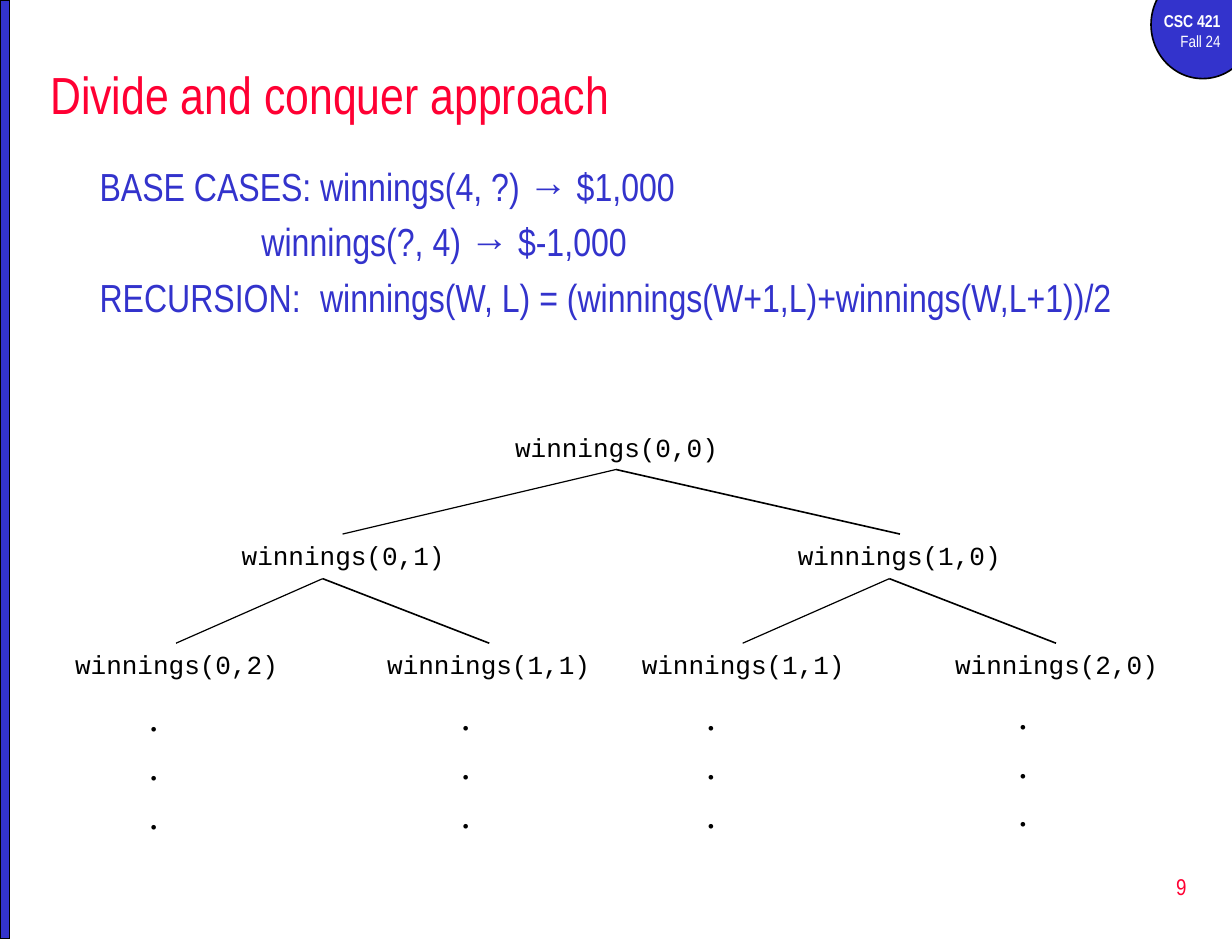
from pptx import Presentation
from pptx.dml.color import RGBColor
from pptx.enum.shapes import MSO_CONNECTOR, MSO_SHAPE
from pptx.enum.text import MSO_ANCHOR, PP_ALIGN
from pptx.oxml.ns import qn
from pptx.util import Inches, Pt
from lxml import etree

LEFT, CENTER, RIGHT = PP_ALIGN.LEFT, PP_ALIGN.CENTER, PP_ALIGN.RIGHT
TOP, MIDDLE = MSO_ANCHOR.TOP, MSO_ANCHOR.MIDDLE
OVAL, RECT = MSO_SHAPE.OVAL, MSO_SHAPE.RECTANGLE
STRAIGHT = MSO_CONNECTOR.STRAIGHT

COLORS = {k: RGBColor.from_string(v) for k, v in {
    "blue": "3333CC", "red": "FF0033", "black": "000000", "white": "FFFFFF",
}.items()}
NARROW, MONO, SERIF = "Arial Narrow", "Courier New", "Times New Roman"

prs = Presentation()
prs.slide_width, prs.slide_height = Inches(10.5), Inches(8)
s = prs.slides.add_slide(prs.slide_layouts[6])


def add_text(x, y, w, h, lines, size, font, color, align=LEFT, anchor=TOP, before=0):
    tb = s.shapes.add_textbox(Inches(x), Inches(y), Inches(w), Inches(h))
    tf = tb.text_frame
    tf.word_wrap = True
    tf.vertical_anchor = anchor
    for i, line in enumerate(lines):
        p = tf.paragraphs[0] if i == 0 else tf.add_paragraph()
        p.alignment = align
        p.space_before = Pt(before)
        r = p.add_run()
        r.text = line
        r.font.size, r.font.name = Pt(size), font
        r.font.color.rgb = COLORS[color]
    return tf


def add_line(x1, y1, x2, y2, width):
    ln = s.shapes.add_connector(STRAIGHT, Inches(x1), Inches(y1), Inches(x2), Inches(y2))
    ln.line.color.rgb = COLORS["black"]
    ln.line.width = Pt(width)
    etree.SubElement(ln._element.spPr, qn("a:effectLst"))


# Corner badge and left bar
for kind, x, y, w, h in [(OVAL, 9.81, -0.25, 0.88, 0.92), (RECT, 0, 0, 0.08, 8)]:
    sp = s.shapes.add_shape(kind, Inches(x), Inches(y), Inches(w), Inches(h))
    sp.shadow.inherit = False
    sp.fill.solid()
    sp.fill.fore_color.rgb = COLORS["blue"]
    sp.line.color.rgb = COLORS["black"]
    sp.line.width = Pt(1)

tf = add_text(9.67, 0.04, 0.83, 0.46, ["CSC 421", "Fall 24"], 10, NARROW, "white", RIGHT)
r = tf.paragraphs[0].runs[0]
r.font.bold, r.font.size = True, Pt(10.5)

# Title
add_text(0.33, 0.42, 9.92, 0.75, ["Divide and conquer approach"], 32, NARROW, "red",
         anchor=MIDDLE)

# Base cases and recursion, hanging indent with default tab stops
rules = ["BASE CASES:\twinnings(4, ?) → $1,000",
         "\t\t\twinnings(?, 4) → $-1,000",
         "RECURSION:\twinnings(W, L) = (winnings(W+1,L)+winnings(W,L+1))/2"]
tf = add_text(0.75, 1.33, 9.52, 1.75, rules, 24, NARROW, "blue", before=5.5)
for p in tf.paragraphs:
    pPr = p._p.get_or_add_pPr()
    pPr.set("marL", str(Inches(0.38)))
    pPr.set("indent", str(-Inches(0.38)))

# Page number
add_text(8.02, 7.29, 2.19, 0.53, ["9"], 14, NARROW, "red", RIGHT, MIDDLE)

# Call tree: (left, top, state)
nodes = [(4.17, 3.63, "0,0"),
         (1.84, 4.55, "0,1"), (6.58, 4.55, "1,0"),
         (0.42, 5.48, "0,2"), (3.08, 5.48, "1,1"),
         (5.25, 5.48, "1,1"), (7.92, 5.48, "2,0")]
for x, y, state in nodes:
    add_text(x, y, 2.17, 0.37, [f"winnings({state})"], 16, MONO, "black", CENTER)

# Branches: parent point, then left and right child
branches = [(5.25, 4, 2.92, 7.67), (2.75, 4.93, 1.5, 4.17), (7.58, 4.93, 6.33, 9)]
for x, y, left, right in branches:
    add_line(x, y, left, y + 0.55, 0.75)
    add_line(x, y, right, y + 0.55, 1)

# Continuation dots below the leaves
for x, y in [(1.17, 5.85), (3.83, 5.84), (5.92, 5.84), (8.58, 5.83)]:
    add_text(x, y, 0.33, 1.31, ["."] * 3, 24, SERIF, "black", before=1.2)

prs.save("out.pptx")
